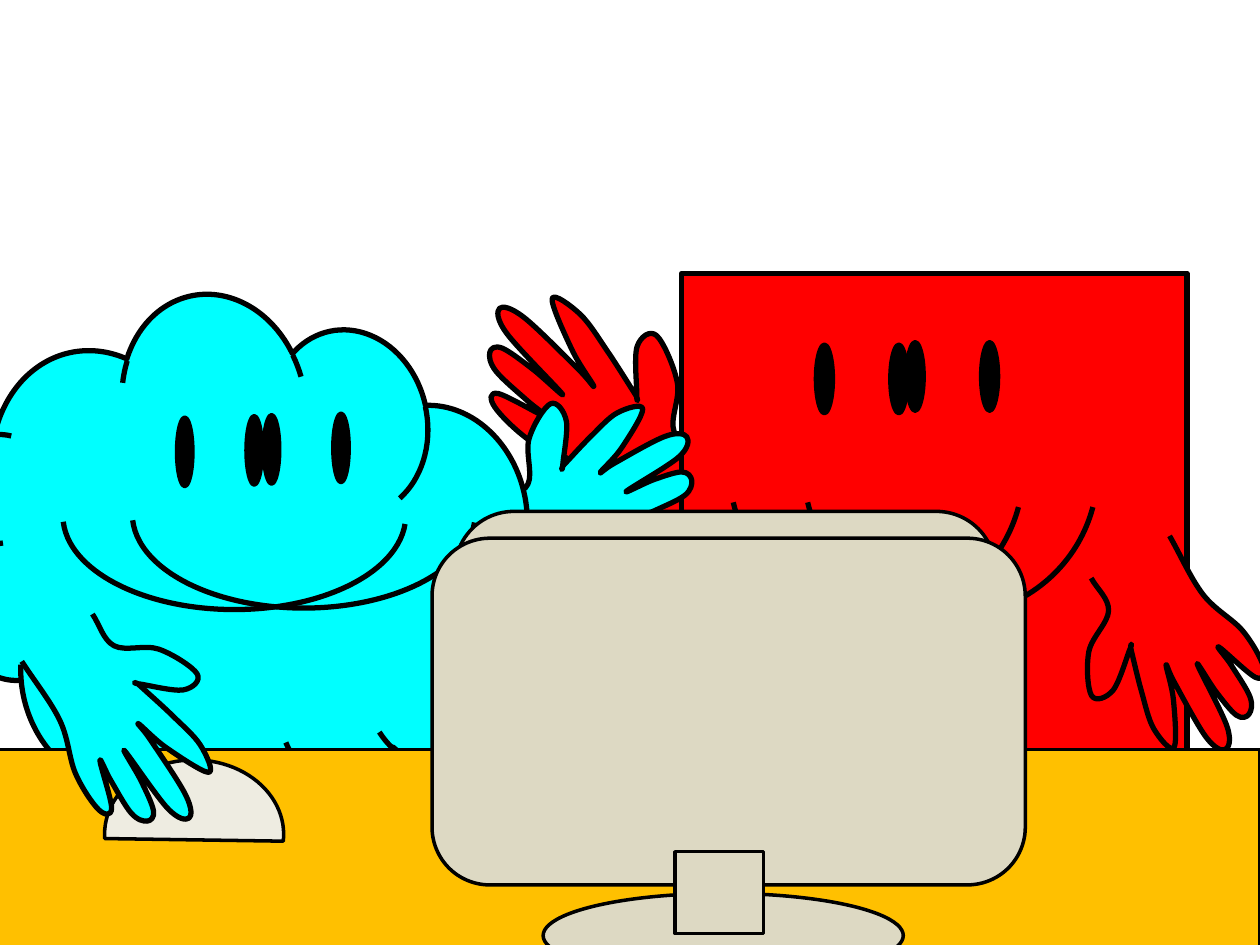
from collections import namedtuple

from lxml.etree import SubElement
from pptx import Presentation
from pptx.dml.color import RGBColor
from pptx.enum.shapes import MSO_SHAPE as Preset
from pptx.oxml.ns import qn
from pptx.util import Cm, Pt

BLACK = RGBColor(0x00, 0x00, 0x00)
RED = RGBColor(0xFF, 0x00, 0x00)
CYAN = RGBColor(0x00, 0xFF, 0xFF)
ORANGE = RGBColor(0xFF, 0xC0, 0x00)
BEIGE = RGBColor(0xDD, 0xD9, 0xC3)
CREAM = RGBColor(0xEE, 0xEC, 0xE1)

THICK, THIN = 3, 2
HAND = "hand"
Part = namedtuple("Part", "form frame fill weight rotation flipped angles elbow",
                  defaults=(THIN, 0, False, (), None))

hand_outline = {
    "wrist": ((0.7, 0.02), (0.69, 0.19)),
    "thumb": ((0.9, 0.32), (1, 0.51), (0.87, 0.53), (0.67, 0.39)),
    "index": ((0.67, 0.4), (0.72, 0.59), (0.75, 0.77), (0.69, 0.89), (0.57, 0.69), (0.52, 0.53)),
    "middle": ((0.52, 0.62), (0.49, 0.91), (0.42, 1), (0.35, 0.91), (0.35, 0.59)),
    "ring": ((0.32, 0.74), (0.27, 0.88), (0.2, 0.9), (0.15, 0.83), (0.17, 0.66), (0.19, 0.56)),
    "little": ((0.07, 0.76), (0, 0.73), (0.02, 0.54)),
    "heel": ((0.14, 0.31),),
}
resting_elbow = (0.17, 0)
raised_elbow = (0.21, -0.32)

red_face = {"size": (5.92, 5.89), "smile": (115.658, 207.206),
            "eye_width": 0.36, "eyes": ((3.56, 0.36), (1.73, 0.41))}
cyan_face = {"size": (6.91, 3.78), "smile": (109.195, 214.357),
             "eye_width": 0.33, "eyes": ((4.04, -0.15), (2.29, -0.1))}


def face(left, top, size, smile, eye_width, eyes):
    mouth = Part(Preset.ARC, (left, top, *size), None, THICK, flipped=True, angles=smile)
    return [mouth] + [
        Part(Preset.OVAL, (left + across, top + down, eye_width, 1.4), BLACK)
        for across, down in eyes]


def dress(shape, part):
    if part.fill is None:
        shape.fill.background()
    else:
        shape.fill.solid()
        shape.fill.fore_color.rgb = part.fill
    for target, formats in (
            (shape, {"rotation": part.rotation}),
            (shape.shadow, {"inherit": False}),
            (shape.line, {"width": Pt(part.weight)}),
            (shape.line.color, {"rgb": BLACK})):
        for name, value in formats.items():
            setattr(target, name, value)


red_raised = Part(HAND, (10.9, 5.13, 3.38, 6.86), RED, THICK, 317.5, True, elbow=raised_elbow)
red_body = Part(Preset.RECTANGLE, (13.74, 5.51, 10.19, 10.06), RED, THICK)
red_resting = Part(HAND, (21.82, 11.07, 3.38, 4.37), RED, THICK, 154.5, True, elbow=resting_elbow)
cyan_raised = Part(HAND, (9.73, 7.39, 3.56, 5.21), CYAN, THICK, 236.8, elbow=raised_elbow)
cyan_body = Part(Preset.CLOUD, (-1.09, 5.92, 11.76, 10.29), CYAN, THICK, 348.1, True)
desk = Part(Preset.RECTANGLE, (-0.51, 15.11, 25.91, 5.03), ORANGE)
mouse = Part(Preset.CHORD, (2.11, 15.32, 3.61, 3), CREAM, angles=(106.367, 2.647))
cyan_on_mouse = Part(HAND, (1.04, 12.24, 3.23, 4.55), CYAN, THICK, 323.2, elbow=resting_elbow)
monitor_foot = Part(Preset.OVAL, (10.95, 18.01, 7.26, 1.7), BEIGE)
monitor_front = Part(Preset.ROUNDED_RECTANGLE, (9.17, 10.31, 10.9, 7.14), BEIGE)
monitor_back = Part(Preset.ROUNDED_RECTANGLE, (8.71, 10.85, 11.96, 6.99), BEIGE)
monitor_neck = Part(Preset.RECTANGLE, (13.61, 17.17, 1.78, 1.65), BEIGE)

layers = [
    [red_raised],
    [red_body],
    [red_resting],
    face(14.71, 6.53, **red_face),
    [cyan_raised],
    [cyan_body],
    face(2.67, 8.48, **cyan_face),
    [desk],
    [mouse, cyan_on_mouse],
    face(1.27, 8.51, **cyan_face),
    face(16.21, 6.53, **red_face),
    [monitor_foot, monitor_front, monitor_back, monitor_neck],
]

deck = Presentation()
deck.slide_width, deck.slide_height = Cm(25.4), Cm(19.05)
slide = deck.slides.add_slide(deck.slide_layouts[6])

for layer in layers:
    canvas = slide.shapes
    if len(layer) > 1:
        canvas = canvas.add_group_shape().shapes
    for part in layer:
        left, top, width, height = map(Cm, part.frame)
        if part.form != HAND:
            shape = canvas.add_shape(part.form, left, top, width, height)
            for index, angle in enumerate(part.angles):
                shape.adjustments[index] = angle
            if part.flipped:
                shape._element.spPr.xfrm.set("flipV", "1")
        else:
            outline = [point for stretch in hand_outline.values() for point in stretch]
            outline.append(part.elbow)
            arm = -part.elbow[1]
            knots = []
            for across, along in outline:
                down = (along + arm) / (1 + arm)
                knots.append(complex(across * width, (1 - down if part.flipped else down) * height))

            builder = canvas.build_freeform(knots[0].real, knots[0].imag)
            builder.add_line_segments([(knot.real, knot.imag) for knot in knots[1:]], close=False)
            shape = builder.convert_to_shape(left, top)

            contour = shape._element.find(".//" + qn("a:path"))
            for straight in contour.findall(qn("a:lnTo")):
                contour.remove(straight)
            padded = [2 * knots[0] - knots[1], *knots, 2 * knots[-1] - knots[-2]]
            for before, start, end, after in zip(padded, padded[1:], padded[2:], padded[3:]):
                curve = SubElement(contour, qn("a:cubicBezTo"))
                for point in (start + (end - before) / 6, end - (after - start) / 6, end):
                    SubElement(curve, qn("a:pt"), x=str(round(point.real)), y=str(round(point.imag)))
        dress(shape, part)

deck.save("out.pptx")
